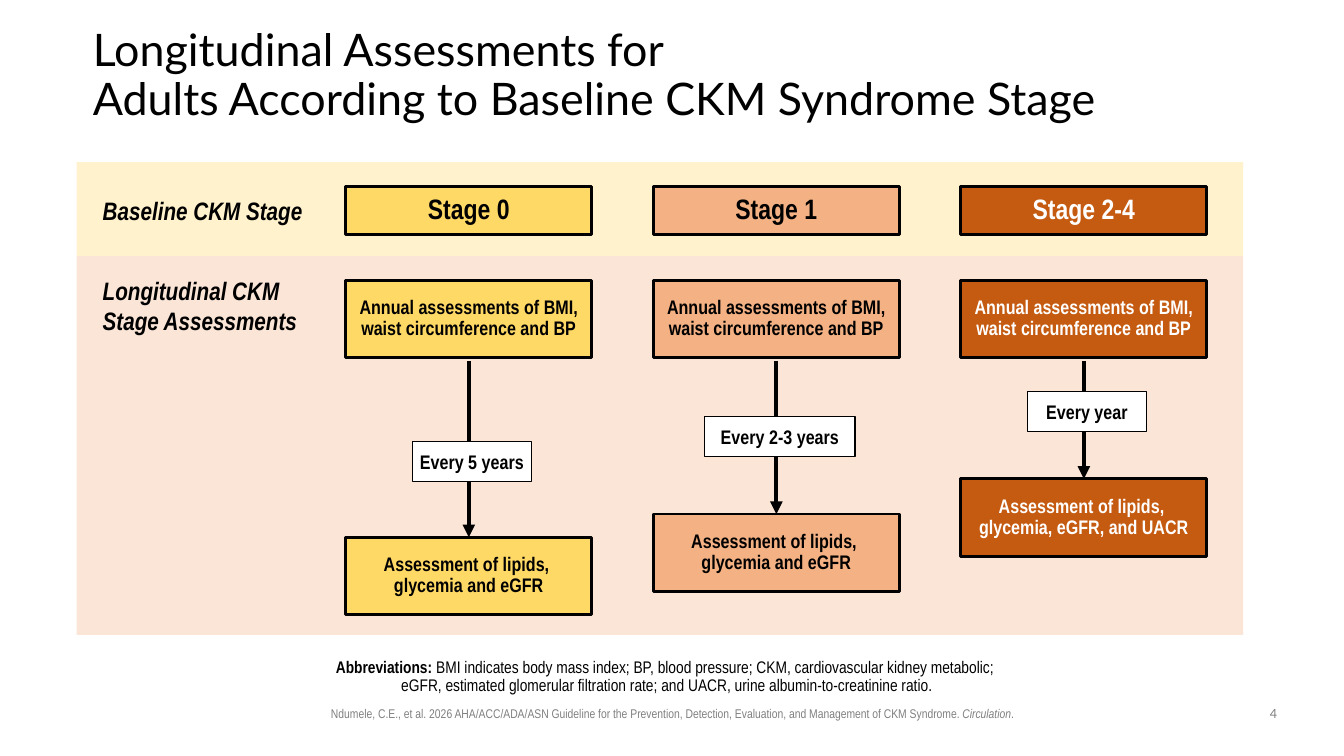
import pptx
import pptx.util
import pptx.dml.color
import pptx.enum.shapes
import pptx.enum.text
import pptx.oxml
import pptx.oxml.ns
from dataclasses import dataclass

ALIGN = pptx.enum.text.PP_ALIGN
ANCHOR = pptx.enum.text.MSO_ANCHOR
SHAPE = pptx.enum.shapes.MSO_SHAPE
PX = 9144  # EMU per px, 100 px to the inch


@dataclass(frozen=True)
class Theme:
    heading_font: str = "Lato"
    body_font: str = "Arial Narrow"
    black: str = "000000"
    white: str = "FFFFFF"
    grey: str = "808080"
    stage_band: str = "FFF2CC"
    assessment_band: str = "FBE5D6"
    title: int = 32
    stage: int = 20
    row_label: int = 18
    box: int = 14
    abbreviations: int = 12
    footer: int = 9


THEME = Theme()

TITLE = ["Longitudinal Assessments for ",
         "Adults According to Baseline CKM Syndrome Stage"]
ROW_LABELS = [("Baseline CKM Stage", 189, 40),
              ("Longitudinal CKM Stage Assessments", 268, 71)]
BANDS = [(THEME.assessment_band, 254, 376), (THEME.stage_band, 161, 93)]
ANNUAL = ["Annual assessments of BMI, waist circumference and BP"]
STAGES = [
    dict(name="Stage 0", fill="FFD966", ink=THEME.black,
         interval="Every 5 years", interval_top=438, interval_width=118,
         labs=["Assessment of lipids, ", "glycemia and eGFR"], labs_top=533),
    dict(name="Stage 1", fill="F4B183", ink=THEME.black,
         interval="Every 2-3 years", interval_top=413, interval_width=149,
         labs=["Assessment of lipids, ", "glycemia and eGFR"], labs_top=510),
    dict(name="Stage 2-4", fill="C55A11", ink=THEME.white,
         interval="Every year", interval_top=388, interval_width=118,
         labs=["Assessment of lipids, ", "glycemia, eGFR, and UACR"], labs_top=475),
]
ABBREVIATIONS_HEAD = "Abbreviations: "
ABBREVIATIONS = [
    "BMI indicates body mass index; BP, blood pressure; CKM, cardiovascular kidney metabolic; ",
    "eGFR, estimated glomerular filtration rate; and UACR, urine albumin-to-creatinine ratio."]
CITATION = ("Ndumele, C.E., et al. 2026 AHA/ACC/ADA/ASN Guideline for the Prevention, "
            "Detection, Evaluation, and Management of CKM Syndrome. ")
JOURNAL = "Circulation"
SLIDE_NUMBER = "4"

BAND_LEFT, BAND_WIDTH = 76, 1157
COLUMN_LEFT, COLUMN_PITCH, BOX_WIDTH = 343, 305, 244
STAGE_TOP, STAGE_HEIGHT = 185, 48
ANNUAL_TOP, BOX_HEIGHT = 278, 77
ARROW_TOP = 358
INTERVAL_HEIGHT, INTERVAL_SHIFT = 40, 3


def emu(*lengths):
    return [pptx.util.Emu(length * PX) for length in lengths]


def rgb(colour):
    return pptx.dml.color.RGBColor.from_string(colour)


def add_run(paragraph, lines, size, colour, font=THEME.body_font, bold=False, italic=False):
    """Add one run per line, with line breaks between them."""
    for index, line in enumerate(lines):
        if index:
            paragraph.add_line_break()
        run = paragraph.add_run()
        run.text = line
        run.font.size = pptx.util.Pt(size)
        run.font.name = font
        run.font.bold = bold
        run.font.italic = italic
        run.font.color.rgb = rgb(colour)


def set_frame(frame, anchor, insets):
    frame.word_wrap = True
    frame.auto_size = pptx.enum.text.MSO_AUTO_SIZE.NONE
    frame.vertical_anchor = anchor
    (frame.margin_left, frame.margin_top,
     frame.margin_right, frame.margin_bottom) = emu(*insets)


def add_text(slide, place, align=ALIGN.LEFT, anchor=ANCHOR.TOP, insets=(10, 5, 10, 5)):
    """Add an empty text box and return its paragraph."""
    frame = slide.shapes.add_textbox(*emu(*place)).text_frame
    set_frame(frame, anchor, insets)
    frame.paragraphs[0].alignment = align
    return frame.paragraphs[0]


def add_rectangle(slide, place, fill, line_width=0):
    rectangle = slide.shapes.add_shape(SHAPE.RECTANGLE, *emu(*place))
    rectangle.shadow.inherit = False
    rectangle.fill.solid()
    rectangle.fill.fore_color.rgb = rgb(fill)
    if line_width:
        rectangle.line.color.rgb = rgb(THEME.black)
        rectangle.line.width = pptx.util.Pt(line_width)
    else:
        rectangle.line.fill.background()
    return rectangle


def add_box(slide, place, lines, fill, ink, size=THEME.box, line_width=2, spacing=0.9):
    frame = add_rectangle(slide, place, fill, line_width).text_frame
    set_frame(frame, ANCHOR.MIDDLE, (0, 0, 0, 0))
    paragraph = frame.paragraphs[0]
    paragraph.alignment = ALIGN.CENTER
    paragraph.line_spacing = spacing
    add_run(paragraph, lines, size, ink, bold=True)


def add_down_arrow(slide, x, top, bottom):
    arrow = slide.shapes.add_connector(
        pptx.enum.shapes.MSO_CONNECTOR.STRAIGHT, *emu(x, top, x, bottom))
    arrow.line.color.rgb = rgb(THEME.black)
    arrow.line.width = pptx.util.Pt(3)
    head = pptx.oxml.parse_xml(
        f'<a:tailEnd {pptx.oxml.ns.nsdecls("a")} type="triangle"/>')
    arrow.line._get_or_add_ln().append(head)
    no_effects = pptx.oxml.parse_xml(f'<a:effectLst {pptx.oxml.ns.nsdecls("a")}/>')
    arrow._element.spPr.append(no_effects)


def add_title(slide):
    title = slide.shapes.title
    title.left, title.top, title.width, title.height = emu(92, 40, 1150, 72)
    set_frame(title.text_frame, ANCHOR.MIDDLE, (0, 0, 0, 0))
    paragraph = title.text_frame.paragraphs[0]
    paragraph.alignment = ALIGN.LEFT
    paragraph.line_spacing = 0.9
    add_run(paragraph, TITLE, THEME.title, THEME.black, THEME.heading_font)


def add_stage(slide, column, stage):
    left = COLUMN_LEFT + column * COLUMN_PITCH
    centre = left + BOX_WIDTH // 2
    fill, ink = stage["fill"], stage["ink"]
    add_box(slide, (left, STAGE_TOP, BOX_WIDTH, STAGE_HEIGHT),
            [stage["name"]], fill, ink, THEME.stage)
    add_box(slide, (left, ANNUAL_TOP, BOX_WIDTH, BOX_HEIGHT), ANNUAL, fill, ink)
    add_box(slide, (left, stage["labs_top"], BOX_WIDTH, BOX_HEIGHT),
            stage["labs"], fill, ink)
    add_down_arrow(slide, centre, ARROW_TOP, stage["labs_top"])
    width = stage["interval_width"]
    interval_left = centre + INTERVAL_SHIFT - width // 2
    add_box(slide, (interval_left, stage["interval_top"], width, INTERVAL_HEIGHT),
            [stage["interval"]], THEME.white, THEME.black, line_width=0.75, spacing=1.0)


def add_footer(slide):
    abbreviations = add_text(slide, (188, 649, 957, 46), ALIGN.CENTER,
                             ANCHOR.BOTTOM, (0, 5, 10, 5))
    abbreviations.line_spacing = 0.9
    add_run(abbreviations, [ABBREVIATIONS_HEAD], THEME.abbreviations, THEME.black, bold=True)
    add_run(abbreviations, ABBREVIATIONS, THEME.abbreviations, THEME.black)

    citation = add_text(slide, (236, 695, 862, 25), ALIGN.CENTER)
    add_run(citation, [CITATION], THEME.footer, THEME.grey)
    add_run(citation, [JOURNAL], THEME.footer, THEME.grey, italic=True)
    add_run(citation, ["."], THEME.footer, THEME.grey)

    number = add_text(slide, (1242, 695, 42, 26), ALIGN.CENTER)
    add_run(number, [SLIDE_NUMBER], THEME.footer, THEME.grey, THEME.heading_font)


def main():
    deck = pptx.Presentation()
    deck.slide_width, deck.slide_height = emu(1333, 750)
    slide = deck.slides.add_slide(deck.slide_layouts.get_by_name("Title Only"))
    add_title(slide)
    for fill, top, height in BANDS:
        add_rectangle(slide, (BAND_LEFT, top, BAND_WIDTH, height), fill)
    for label, top, height in ROW_LABELS:
        add_run(add_text(slide, (92, top, 228, height)), [label],
                THEME.row_label, THEME.black, bold=True, italic=True)
    for column, stage in enumerate(STAGES):
        add_stage(slide, column, stage)
    add_footer(slide)
    deck.save("out.pptx")


if __name__ == "__main__":
    main()
